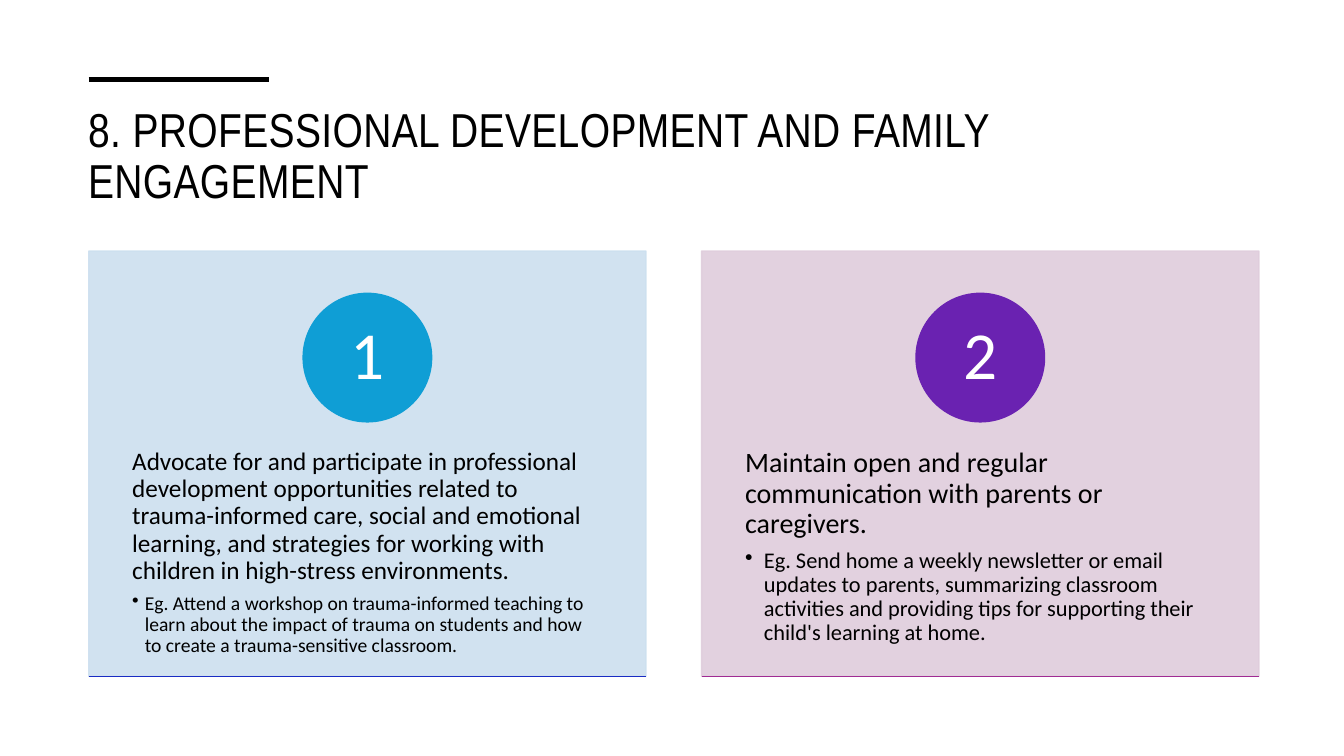
from dataclasses import dataclass

from lxml.etree import SubElement
from pptx import Presentation
from pptx.dml.color import RGBColor
from pptx.enum.shapes import MSO_CONNECTOR as Connector, MSO_SHAPE as Shape
from pptx.enum.text import MSO_ANCHOR as Anchor, PP_ALIGN as Align
from pptx.oxml.ns import qn
from pptx.util import Pt


@dataclass(frozen=True)
class Theme:
    ink: str = "000000"
    white: str = "FFFFFF"
    heading_font: str = "Arial Narrow"
    body_font: str = "Calibri"
    title_size: int = 34
    number_size: int = 48


THEME = Theme()
MARGIN = 63.4
CARD_TOP, CARD_WIDTH, CARD_HEIGHT = 179.3, 398, 303.8
CARD_PITCH = 437.8
BADGE_SIZE, BADGE_OFFSET = 91.8, 30.2
BODY_OFFSET, BODY_HEIGHT = 115.2, 182.2


@dataclass(frozen=True)
class Card:
    number: str
    advice: str
    advice_size: int
    example: str
    example_size: int
    bullet_indent: float
    panel: str
    badge: str
    base: str


CARDS = [
    Card("1",
         "Advocate for and participate in professional development opportunities "
         "related to trauma-informed care, social and emotional learning, and "
         "strategies for working with children in high-stress environments.", 18,
         "Eg. Attend a workshop on trauma-informed teaching to learn about the "
         "impact of trauma on students and how to create a trauma-sensitive "
         "classroom.", 14, 9, "CCDFEF", "0F9ED5", "192CC3"),
    Card("2",
         "Maintain open and regular communication with parents or caregivers.", 20,
         "Eg. Send home a weekly newsletter or email updates to parents, "
         "summarizing classroom activities and providing tips for supporting "
         "their child's learning at home.", 16, 13.5, "DFCDDC", "6A22B1", "A02B93"),
]


def write(paragraph, text, *, size, font=THEME.body_font, color=THEME.ink,
          align=Align.LEFT, after=0, tracking=0, bullet_indent=0):
    paragraph.alignment = align
    paragraph.line_spacing = 0.9
    paragraph.space_after = Pt(after)
    run = paragraph.add_run()
    run.text = text
    run.font.size = Pt(size)
    run.font.name = font
    run.font.color.rgb = RGBColor.from_string(color)
    if tracking:
        run.font._element.set("spc", str(round(tracking * 100)))
    if bullet_indent:
        paragraph.level = 1
        properties = paragraph._p.get_or_add_pPr()
        properties.set("marL", str(Pt(bullet_indent)))
        properties.set("indent", str(-Pt(bullet_indent)))
        SubElement(properties, qn("a:buChar"), char="•")


def set_insets(frame, horizontal, vertical):
    frame.word_wrap = True
    frame.margin_left = frame.margin_right = Pt(horizontal)
    frame.margin_top = frame.margin_bottom = Pt(vertical)


def add_text_frame(slide, left, top, width, height, insets):
    box = slide.shapes.add_textbox(Pt(left), Pt(top), Pt(width), Pt(height))
    set_insets(box.text_frame, *insets)
    return box.text_frame


def add_filled(slide, kind, left, top, width, height, color, opacity=100):
    filled = slide.shapes.add_shape(kind, Pt(left), Pt(top), Pt(width), Pt(height))
    filled.shadow.inherit = False
    filled.line.width = Pt(1)
    for fill in (filled.fill, filled.line.fill):
        fill.solid()
        fill.fore_color.rgb = RGBColor.from_string(color)
    if opacity < 100:
        for value in filled._element.spPr.iter(qn("a:srgbClr")):
            SubElement(value, qn("a:alpha"), val=str(opacity * 1000))
    return filled


def add_rule(slide, left, top, length, color, weight):
    """Draw a horizontal line."""
    rule = slide.shapes.add_connector(
        Connector.STRAIGHT, Pt(left), Pt(top), Pt(left + length), Pt(top))
    rule.line.color.rgb = RGBColor.from_string(color)
    rule.line.width = Pt(weight)
    SubElement(rule._element.spPr, qn("a:effectLst"))


def add_title(slide):
    add_rule(slide, MARGIN, 57, 129, THEME.ink, 3.5)
    frame = add_text_frame(slide, 55.8, 71.3, 850, 82.8, (7.2, 3.6))
    frame.vertical_anchor = Anchor.MIDDLE
    write(frame.paragraphs[0], "8. PROFESSIONAL DEVELOPMENT AND FAMILY ENGAGEMENT",
          size=THEME.title_size, font=THEME.heading_font, tracking=0.3)


def add_card(slide, card, left):
    add_filled(slide, Shape.RECTANGLE, left, CARD_TOP, CARD_WIDTH, CARD_HEIGHT,
               card.panel, opacity=90)

    body = add_text_frame(slide, left, CARD_TOP + BODY_OFFSET, CARD_WIDTH,
                          BODY_HEIGHT, (31, 26))
    write(body.paragraphs[0], card.advice, size=card.advice_size,
          after=0.35 * card.advice_size)
    write(body.add_paragraph(), card.example, size=card.example_size,
          after=0.15 * card.example_size, bullet_indent=card.bullet_indent)

    badge = add_filled(slide, Shape.OVAL, left + (CARD_WIDTH - BADGE_SIZE) / 2,
                       CARD_TOP + BADGE_OFFSET, BADGE_SIZE, BADGE_SIZE, card.badge)
    set_insets(badge.text_frame, 7.2, 0.7)
    badge.text_frame.vertical_anchor = Anchor.MIDDLE
    write(badge.text_frame.paragraphs[0], card.number, size=THEME.number_size,
          color=THEME.white, align=Align.CENTER)

    add_rule(slide, left, CARD_TOP + CARD_HEIGHT, CARD_WIDTH, card.base, 1)


def main():
    deck = Presentation()
    deck.slide_width, deck.slide_height = Pt(960), Pt(540)
    slide = deck.slides.add_slide(deck.slide_layouts[6])
    add_title(slide)
    for index, card in enumerate(CARDS):
        add_card(slide, card, MARGIN + index * CARD_PITCH)
    deck.save("out.pptx")


if __name__ == "__main__":
    main()
